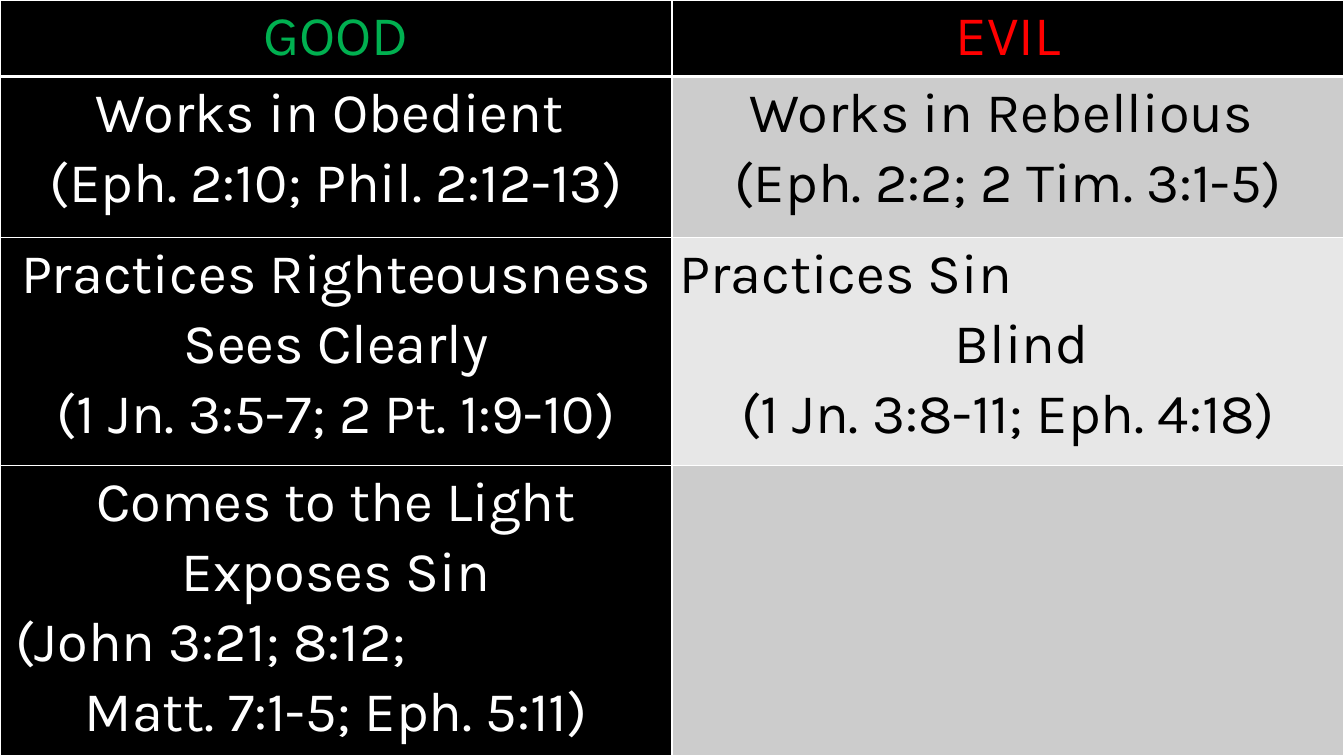
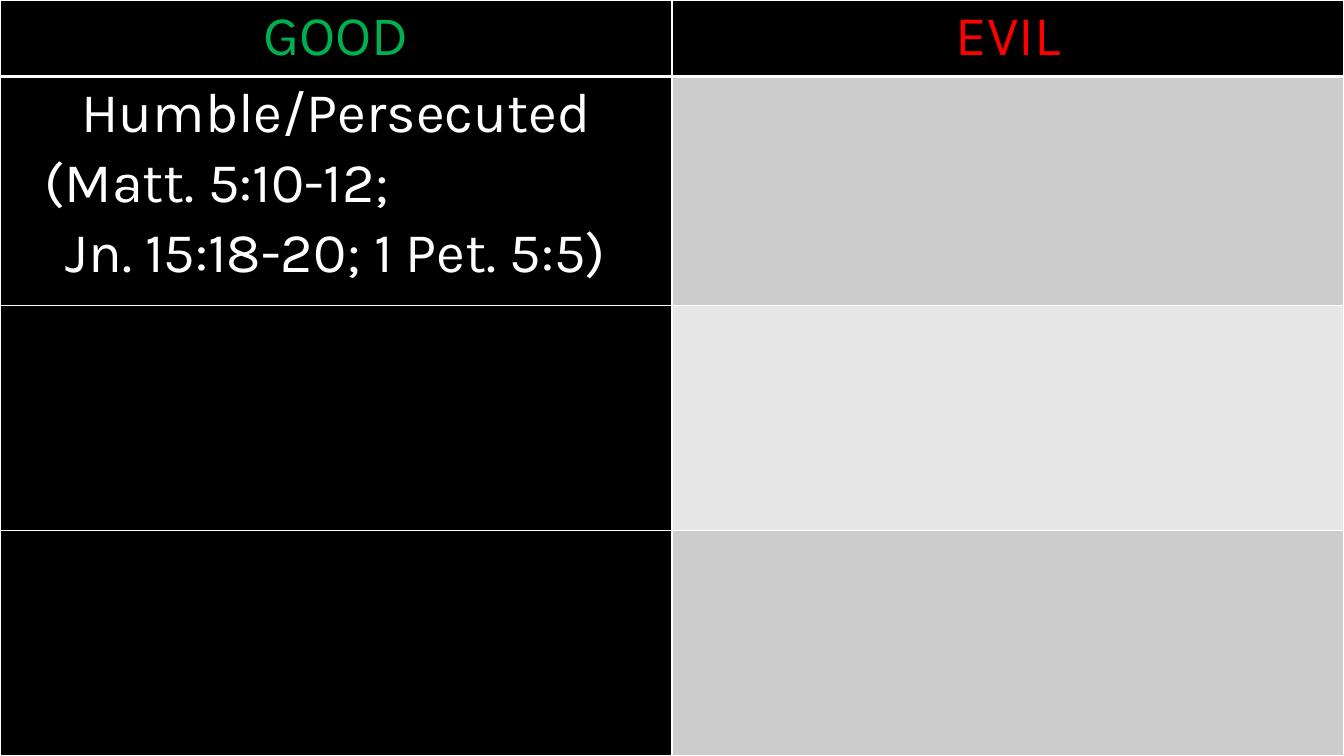
from lxml import etree
from pptx import Presentation
from pptx.dml import color
from pptx.enum import text
from pptx.oxml import ns
from pptx.util import Cm, Pt

COLORS = {"black": "000000", "white": "FFFFFF", "good": "00B050",
          "evil": "FF0000", "band_dark": "CCCCCC", "band_light": "E7E7E7"}
WIDTH, HEIGHT = Cm(33.87), Cm(19.05)
HEADER_HEIGHT = 1.93
CENTER, LEFT = text.PP_ALIGN.CENTER, text.PP_ALIGN.LEFT


class ContrastDeck:
    """Builds full-slide tables that set good against evil."""

    font, size, spacing = "Karla", Pt(40), 1.07

    def __init__(self):
        self.deck = Presentation()
        self.deck.slide_width, self.deck.slide_height = WIDTH, HEIGHT
        self.slide = None

    def rgb(self, name):
        return color.RGBColor.from_string(COLORS[name])

    def add_slide(self):
        self.slide = self.deck.slides.add_slide(self.deck.slide_layouts[6])
        background = self.slide.background.fill
        background.solid()
        background.fore_color.rgb = self.rgb("black")

    def add_borders(self, cell, top, bottom):
        properties = cell._tc.get_or_add_tcPr()
        widths = {"lnL": 1, "lnR": 1, "lnT": top, "lnB": bottom}
        for position, (side, width) in enumerate(widths.items()):
            border = etree.Element(ns.qn(f"a:{side}"), w=str(Pt(width)))
            fill = etree.SubElement(border, ns.qn("a:solidFill"))
            etree.SubElement(fill, ns.qn("a:srgbClr"), val=COLORS["white"])
            properties.insert(position, border)

    def write_lines(self, cell, lines, ink):
        frame = cell.text_frame
        for number, line in enumerate(lines):
            wording, alignment, indent = (line, CENTER, 0) if isinstance(line, str) else line
            paragraph = frame.add_paragraph() if number else frame.paragraphs[0]
            paragraph.text = wording
            paragraph.alignment = alignment
            paragraph.line_spacing = self.spacing
            if indent:
                paragraph._p.get_or_add_pPr().set("marL", str(Cm(indent)))
            font = paragraph.runs[0].font
            font.name, font.size, font.bold = self.font, self.size, False
            font.color.rgb = self.rgb(ink)

    def fill_cell(self, cell, row, lines, fill, ink):
        cell.margin_left = cell.margin_right = Cm(0.18)
        cell.margin_top = cell.margin_bottom = 0
        cell.fill.solid()
        cell.fill.fore_color.rgb = self.rgb(fill)
        self.add_borders(cell, top=3 if row == 1 else 1, bottom=3 if row == 0 else 1)
        self.write_lines(cell, lines, ink)

    def add_contrast(self, heights, pairs):
        self.add_slide()
        table = self.slide.shapes.add_table(len(pairs) + 1, 2, 0, 0, WIDTH, HEIGHT).table
        table.first_row = table.horz_banding = False
        for row, height in zip(table.rows, [HEADER_HEIGHT, *heights]):
            row.height = Cm(height)
        for column, side in enumerate(("good", "evil")):
            self.fill_cell(table.cell(0, column), 0, [side.upper()], "black", side)
        for row, (good, evil) in enumerate(pairs, 1):
            band = "band_dark" if row % 2 else "band_light"
            self.fill_cell(table.cell(row, 0), row, good, "black", "white")
            self.fill_cell(table.cell(row, 1), row, evil, band, "black")


def main():
    contrast = ContrastDeck()
    contrast.add_contrast([4.06, 5.74, 7.32], [
        (["Works in Obedient ", "(Eph. 2:10; Phil. 2:12-13)"],
         ["Works in Rebellious ", "(Eph. 2:2; 2 Tim. 3:1-5)"]),
        (["Practices Righteousness Sees Clearly", "(1 Jn. 3:5-7; 2 Pt. 1:9-10)"],
         [("Practices Sin", LEFT, 0), ("Blind", CENTER, 0.7), "(1 Jn. 3:8-11; Eph. 4:18)"]),
        (["Comes to the Light Exposes Sin", ("(John 3:21; 8:12;", LEFT, 0.2),
          "Matt. 7:1-5; Eph. 5:11)"], []),
    ])
    contrast.add_contrast([5.76, 5.68, 5.68], [
        (["Humble/Persecuted", ("(Matt. 5:10-12;", LEFT, 0.95),
          "Jn. 15:18-20; 1 Pet. 5:5)"], []),
        ([], []),
        ([], []),
    ])
    contrast.deck.save("out.pptx")


if __name__ == "__main__":
    main()
